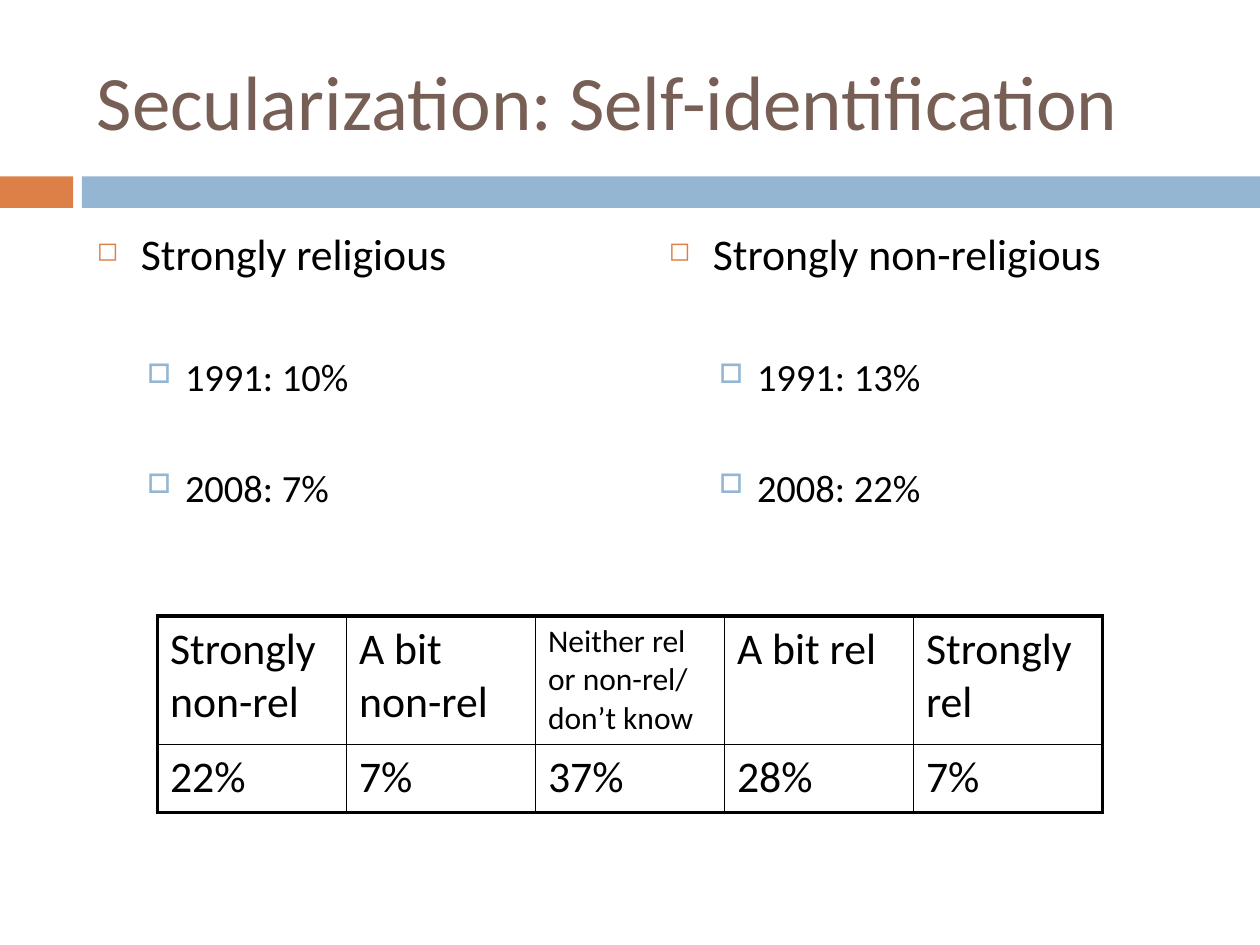
from dataclasses import dataclass

from lxml.etree import SubElement
from pptx import Presentation
from pptx.dml.color import RGBColor
from pptx.enum.shapes import MSO_SHAPE as Shape
from pptx.enum.text import MSO_ANCHOR as Anchor
from pptx.oxml import parse_xml
from pptx.oxml.ns import nsdecls, qn
from pptx.util import Inches, Pt


@dataclass(frozen=True)
class Theme:
    font: str = "Calibri"
    brown: str = "775F55"
    orange: str = "DD8047"
    blue: str = "94B6D2"
    black: str = "000000"
    title_size: int = 44
    body_size: int = 25
    detail_size: int = 22
    small_size: int = 18
    outer_line: float = 2.25
    inner_line: float = 1


@dataclass(frozen=True)
class Bullet:
    char: str
    color: str
    percent: int
    margin: float
    hanging: float


THEME = Theme()
MAIN_BULLET = Bullet("◻", THEME.orange, 60, 0.35, 0.35)
DETAIL_BULLET = Bullet("□", THEME.blue, 70, 0.7, 0.3)

COLUMNS = [
    (0.67, "Strongly religious", ["1991: 10%", "2008: 7%"]),
    (5.21, "Strongly non-religious", ["1991: 13%", "2008: 22%"]),
]
ANSWERS = [
    ("Strongly non-rel", "22%"),
    ("A bit non-rel", "7%"),
    ("Neither rel or non-rel/\ndon’t know", "37%"),
    ("A bit rel", "28%"),
    ("Strongly rel", "7%"),
]


def style_text(para, size, color=THEME.black):
    font = para.font
    font.name = THEME.font
    font.size = Pt(size)
    font.color.rgb = RGBColor.from_string(color)


def add_bar(page, left, width, color):
    bar = page.shapes.add_shape(
        Shape.RECTANGLE, Inches(left), Inches(1.4), Inches(width), Inches(0.25))
    bar.shadow.inherit = False
    bar.fill.solid()
    bar.fill.fore_color.rgb = RGBColor.from_string(color)
    bar.line.fill.background()


def add_text_frame(page, left, top, width, height):
    box = page.shapes.add_textbox(
        Inches(left), Inches(top), Inches(width), Inches(height))
    box.text_frame.word_wrap = True
    return box.text_frame


def add_title(page, text):
    frame = add_text_frame(page, 0.67, 0.25, 8.92, 1.08)
    frame.vertical_anchor = Anchor.MIDDLE
    para = frame.paragraphs[0]
    para.text = text
    style_text(para, THEME.title_size, THEME.brown)


def set_bullet(para, bullet):
    props = para._p.get_or_add_pPr()
    props.set("marL", str(Inches(bullet.margin)))
    props.set("indent", str(-Inches(bullet.hanging)))
    color = SubElement(props, qn("a:buClr"))
    SubElement(color, qn("a:srgbClr"), val=bullet.color)
    SubElement(props, qn("a:buSzPct"), val=str(bullet.percent * 1000))
    SubElement(props, qn("a:buChar"), char=bullet.char)


def add_column(page, left, heading, details):
    frame = add_text_frame(page, left, 1.75, 4.38, 2.96)
    para = frame.paragraphs[0]
    para.text = heading
    set_bullet(para, MAIN_BULLET)
    style_text(para, THEME.body_size)
    for detail, gap in zip(details, (42.5, 37)):
        para = frame.add_paragraph()
        para.text = detail
        para.level = 1
        para.space_before = Pt(gap)
        set_bullet(para, DETAIL_BULLET)
        style_text(para, THEME.detail_size)


def set_borders(cell, outer_sides):
    props = cell._tc.get_or_add_tcPr()
    for index, side in enumerate("LRTB"):
        width = THEME.outer_line if side in outer_sides else THEME.inner_line
        props.insert(index, parse_xml(
            f'<a:ln{side} {nsdecls("a")} w="{Pt(width)}"><a:solidFill>'
            f'<a:srgbClr val="{THEME.black}"/></a:solidFill></a:ln{side}>'))


def add_answer_table(page, answers):
    last = len(answers) - 1
    table = page.shapes.add_table(
        2, len(answers), Inches(1.25), Inches(4.89),
        Inches(7.5), Inches(1.56)).table
    table.first_row = table.horz_banding = False
    table.rows[0].height, table.rows[1].height = Inches(1.02), Inches(0.54)
    for col, answer in enumerate(answers):
        table.columns[col].width = Inches(1.5)
        for row, text in enumerate(answer):
            cell = table.cell(row, col)
            cell.fill.background()
            para = cell.text_frame.paragraphs[0]
            para.text = text
            # The longest label is set smaller
            style_text(para, THEME.small_size if "\n" in text else THEME.body_size)
            sides = "TB"[row] + "L" * (col == 0) + "R" * (col == last)
            set_borders(cell, sides)


def main():
    deck = Presentation()
    deck.slide_width, deck.slide_height = Inches(10), Inches(7.5)
    page = deck.slides.add_slide(deck.slide_layouts[6])

    # Title and divider
    add_bar(page, 0, 0.58, THEME.orange)
    add_bar(page, 0.65, 9.35, THEME.blue)
    add_title(page, "Secularization: Self-identification")

    # Two lists of survey years
    for left, heading, details in COLUMNS:
        add_column(page, left, heading, details)

    # Full range of answers
    add_answer_table(page, ANSWERS)
    deck.save("out.pptx")


if __name__ == "__main__":
    main()
